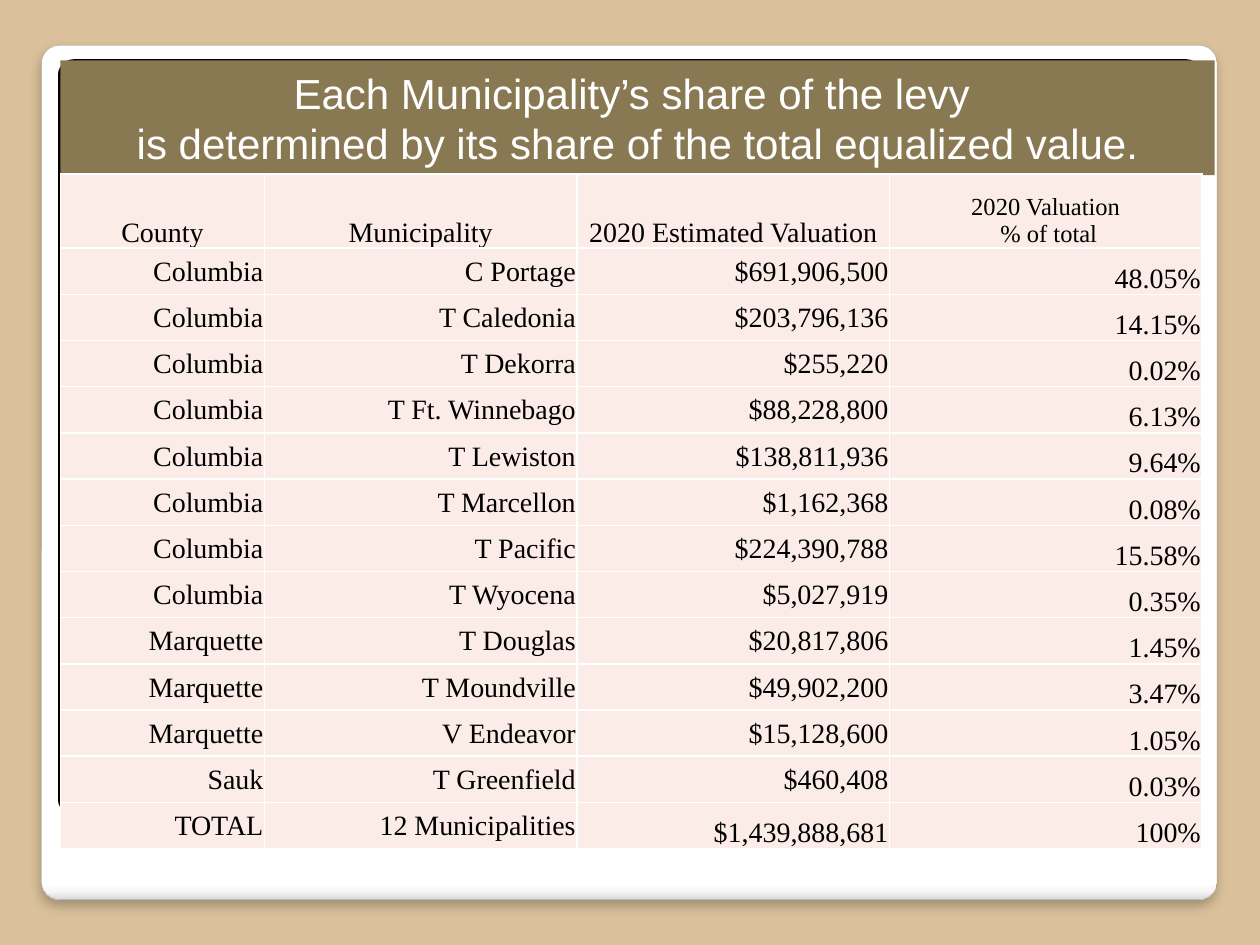
from dataclasses import dataclass

from pptx import Presentation
from pptx.dml.color import RGBColor
from pptx.enum.shapes import MSO_SHAPE
from pptx.enum.text import MSO_ANCHOR, MSO_AUTO_SIZE, PP_ALIGN
from pptx.oxml import parse_xml
from pptx.oxml.ns import nsdecls, qn
from pptx.util import Inches, Pt

TITLE = [
    "Each Municipality’s share of the levy ",
    "is determined by its share of the total equalized value.",
]
HEADERS = [
    ["County"],
    ["Municipality"],
    ["2020 Estimated Valuation"],
    ["2020 Valuation", " % of total"],
]
ROWS = [
    ("Columbia", "C Portage", "$691,906,500", "48.05%"),
    ("Columbia", "T Caledonia", "$203,796,136", "14.15%"),
    ("Columbia", "T Dekorra", "$255,220", "0.02%"),
    ("Columbia", "T Ft. Winnebago", "$88,228,800", "6.13%"),
    ("Columbia", "T Lewiston", "$138,811,936", "9.64%"),
    ("Columbia", "T Marcellon", "$1,162,368", "0.08%"),
    ("Columbia", "T Pacific", "$224,390,788", "15.58%"),
    ("Columbia", "T Wyocena", "$5,027,919", "0.35%"),
    ("Marquette", "T Douglas", "$20,817,806", "1.45%"),
    ("Marquette", "T Moundville", "$49,902,200", "3.47%"),
    ("Marquette", "V Endeavor", "$15,128,600", "1.05%"),
    ("Sauk", "T Greenfield", "$460,408", "0.03%"),
    ("TOTAL", "12 Municipalities", "$1,439,888,681", "100%"),
]
COLUMN_WIDTHS = [1.62, 2.48, 2.48, 2.48]
TABLE_BOX = (0.48, 1.38, 9.06, 5.36)
HEADER_HEIGHT = 0.59


@dataclass(frozen=True)
class Theme:
    background: str = "DAC19B"
    banner: str = "887952"
    cell: str = "FCECE7"
    white: str = "FFFFFF"
    black: str = "000000"
    panel_line: str = "A4A4A4"
    panel_stops: tuple = ((0, "FFFFFF"), (98, "FFFFFF"), (99, "F7F7F7"), (100, "DADADA"))
    backing_stops: tuple = ((0, "8C8C8C"), (55, "000000"), (100, "000000"))
    title_font: str = "Arial"
    table_font: str = "Times New Roman"
    title_size: int = 24
    table_size: int = 16
    small_size: int = 14


THEME = Theme()


def write_text(frame, lines, *, font, size, color, align):
    for index, line in enumerate(lines):
        para = frame.paragraphs[0] if index == 0 else frame.add_paragraph()
        para.alignment = align
        span = para.add_run()
        span.text = line
        span.font.name = font
        span.font.size = Pt(size)
        span.font.color.rgb = RGBColor.from_string(color)


def add_panel(page, box, stops, direction):
    panel = page.shapes.add_shape(MSO_SHAPE.ROUNDED_RECTANGLE, *map(Inches, box))
    panel.adjustments[0] = 0.021
    panel.shadow.inherit = False
    panel.line.fill.background()
    panel.fill.gradient()
    stop_xml = "".join(
        f'<a:gs pos="{place * 1000}"><a:srgbClr val="{color}"/></a:gs>'
        for place, color in stops
    )
    properties = panel.element.spPr
    properties.replace(properties.find(qn("a:gradFill")), parse_xml(
        f'<a:gradFill {nsdecls("a")} rotWithShape="1">'
        f"<a:gsLst>{stop_xml}</a:gsLst>{direction}</a:gradFill>"
    ))
    return panel


def add_soft_shadow(shape):
    shape.element.spPr.find(qn("a:effectLst")).append(parse_xml(
        f'<a:outerShdw {nsdecls("a")} blurRad="{Pt(6)}" dist="{Pt(4)}" dir="5400000" '
        f'algn="t" rotWithShape="0"><a:srgbClr val="{THEME.black}">'
        '<a:alpha val="25000"/></a:srgbClr></a:outerShdw>'
    ))


def format_cell(cell, lines, *, size, align, anchor):
    cell.margin_left = cell.margin_right = cell.margin_top = Inches(0.01)
    cell.margin_bottom = 0
    cell.vertical_anchor = anchor
    cell.fill.solid()
    cell.fill.fore_color.rgb = RGBColor.from_string(THEME.cell)
    properties = cell._tc.get_or_add_tcPr()
    for index, side in enumerate(("lnL", "lnR", "lnT", "lnB")):
        properties.insert(index, parse_xml(
            f'<a:{side} {nsdecls("a")} w="{Pt(1)}"><a:solidFill>'
            f'<a:srgbClr val="{THEME.white}"/></a:solidFill></a:{side}>'
        ))
    write_text(cell.text_frame, lines, font=THEME.table_font, size=size,
               color=THEME.black, align=align)


def add_panels(page):
    panel = add_panel(page, (0.33, 0.36, 9.33, 6.78), THEME.panel_stops,
                      '<a:lin ang="5400000" scaled="0"/>')
    panel.line.color.rgb = RGBColor.from_string(THEME.panel_line)
    panel.line.width = Pt(0.16)
    add_soft_shadow(panel)
    return add_panel(page, (0.46, 0.47, 9.08, 6), THEME.backing_stops,
                     '<a:path path="circle"><a:fillToRect l="50000" t="175000" '
                     'r="50000" b="-75000"/></a:path>')


def format_title(title):
    title.left, title.top, title.width, title.height = map(Inches, (0.48, 0.48, 9.16, 0.91))
    title.fill.solid()
    title.fill.fore_color.rgb = RGBColor.from_string(THEME.banner)
    frame = title.text_frame
    frame.word_wrap = True
    frame.auto_size = MSO_AUTO_SIZE.NONE
    frame.vertical_anchor = MSO_ANCHOR.MIDDLE
    write_text(frame, TITLE, font=THEME.title_font, size=THEME.title_size,
               color=THEME.white, align=PP_ALIGN.CENTER)


def add_valuation_table(page):
    table = page.shapes.add_table(
        len(ROWS) + 1, len(HEADERS), *map(Inches, TABLE_BOX)).table
    table.first_row = table.horz_banding = False
    for column, width in zip(table.columns, COLUMN_WIDTHS):
        column.width = Inches(width)
    row_height = (TABLE_BOX[3] - HEADER_HEIGHT) / len(ROWS)
    for index, row in enumerate(table.rows):
        row.height = Inches(row_height if index else HEADER_HEIGHT)
    for column, lines in enumerate(HEADERS):
        size = THEME.small_size if len(lines) > 1 else THEME.table_size
        format_cell(table.cell(0, column), lines, size=size,
                    align=PP_ALIGN.CENTER, anchor=MSO_ANCHOR.BOTTOM)
    for index, values in enumerate(ROWS, start=1):
        bottom_from = 2 if index == len(ROWS) else 3
        for column, value in enumerate(values):
            anchor = MSO_ANCHOR.BOTTOM if column >= bottom_from else MSO_ANCHOR.MIDDLE
            format_cell(table.cell(index, column), [value], size=THEME.table_size,
                        align=PP_ALIGN.RIGHT, anchor=anchor)


def main():
    deck = Presentation()
    deck.slide_width, deck.slide_height = Inches(10), Inches(7.5)
    page = deck.slides.add_slide(deck.slide_layouts[5])
    page.background.fill.solid()
    page.background.fill.fore_color.rgb = RGBColor.from_string(THEME.background)
    backing = add_panels(page)
    title = page.shapes.title
    format_title(title)
    backing.element.addnext(title.element)
    add_valuation_table(page)
    deck.save("out.pptx")


if __name__ == "__main__":
    main()
